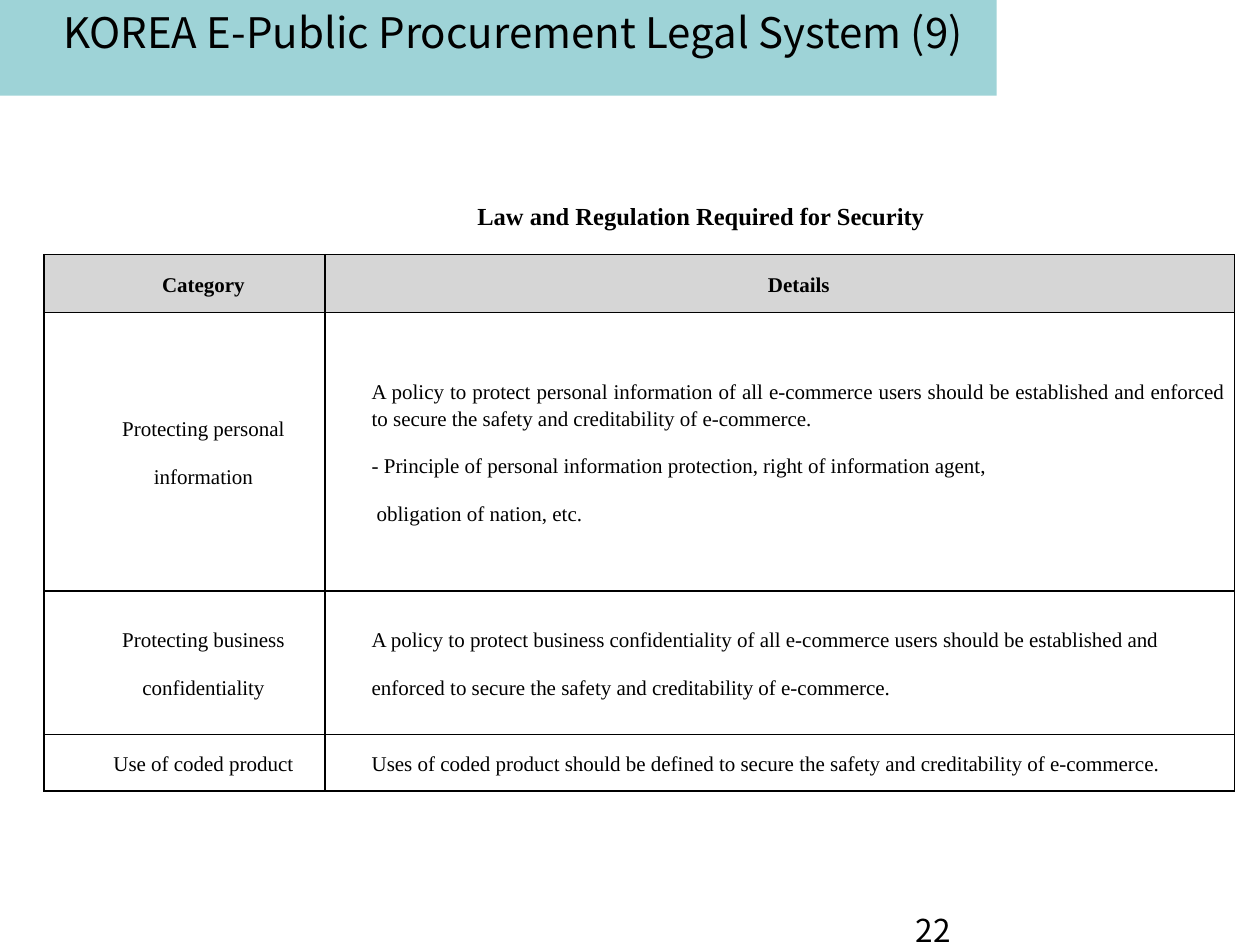
from lxml.etree import SubElement
from pptx import Presentation
from pptx.dml.color import RGBColor
from pptx.enum.shapes import MSO_SHAPE
from pptx.enum.text import MSO_ANCHOR, PP_ALIGN
from pptx.oxml.ns import qn
from pptx.util import Inches, Pt

TITLE = "KOREA E-Public Procurement Legal System (9)"
CAPTION = "Law and Regulation Required for Security"
PAGE = "22"
HEADER = ("Category", "Details")
BODY = [
    (["Protecting personal", "information"],
     ["A policy to protect personal information of all e-commerce users should be "
      "established and enforced to secure the safety and creditability of e-commerce.",
      "- Principle of personal information protection, right of information agent,",
      "obligation of nation, etc."]),
    (["Protecting business", "confidentiality"],
     ["A policy to protect business confidentiality of all e-commerce users should be "
      "established and",
      "enforced to secure the safety and creditability of e-commerce."]),
    (["Use of coded product"],
     ["Uses of coded product should be defined to secure the safety and creditability "
      "of e-commerce."]),
]
COLS = (2.23, 7.22)
ROWS = (0.46, 2.21, 1.14, 0.45)
SANS, SERIF = "Noto Sans CJK KR", "Times New Roman"
BLACK, TEAL, GREY = "000000", "9ED3D7", "D6D6D6"
INDENT, HANGING = 0.3, {"obligation of nation, etc.": 0.34}


def rgb(value):
    return RGBColor.from_string(value)


def inches(*values):
    return [Inches(v) for v in values]


def write(p, text, size, font, bold=False, align=PP_ALIGN.LEFT, indent=0):
    p.alignment = align
    pPr = p._p.get_or_add_pPr()
    pPr.set("marL", str(Inches(indent)))
    pPr.set("indent", "0")
    r = p.add_run()
    r.text = text
    r.font.size, r.font.name, r.font.bold = Pt(size), font, bold
    r.font.color.rgb = rgb(BLACK)


def add_text(slide, box, text, *style, **options):
    tf = slide.shapes.add_textbox(*inches(*box)).text_frame
    tf.word_wrap = True
    write(tf.paragraphs[0], text, *style, **options)


def add_borders(cell):
    tcPr = cell._tc.get_or_add_tcPr()
    for side in ("lnL", "lnR", "lnT", "lnB"):
        ln = SubElement(tcPr, qn(f"a:{side}"), w=str(Pt(1)))
        fill = SubElement(ln, qn("a:solidFill"))
        SubElement(fill, qn("a:srgbClr"), val=BLACK)


def fill_cell(cell, lines, header, align):
    add_borders(cell)
    if header:
        cell.fill.solid()
        cell.fill.fore_color.rgb = rgb(GREY)
    else:
        cell.fill.background()
    cell.vertical_anchor = MSO_ANCHOR.MIDDLE
    cell.margin_left = cell.margin_right = Inches(0.07)
    cell.margin_top = cell.margin_bottom = Inches(0.02)
    tf = cell.text_frame
    for i, line in enumerate(lines):
        p = tf.add_paragraph() if i else tf.paragraphs[0]
        write(p, line, 12, SERIF, header, align, HANGING.get(line, INDENT))
        p.line_spacing = 1.15
        p.space_before = Pt(12 if i else 0)


def add_band(slide):
    s = slide.shapes.add_shape(MSO_SHAPE.RECTANGLE, *inches(0, 0, 7.91, 0.76))
    s.shadow.inherit = False
    s.fill.solid()
    s.fill.fore_color.rgb = rgb(TEAL)
    s.line.fill.background()
    slide.shapes._spTree.insert(2, s._element)


def add_title(slide):
    s = slide.shapes.title
    s.left, s.top, s.width, s.height = inches(0, 0, 8.14, 0.6)
    s.text_frame.vertical_anchor = MSO_ANCHOR.TOP
    write(s.text_frame.paragraphs[0], TITLE, 24, SANS, align=PP_ALIGN.CENTER)


def add_law_table(slide):
    box = inches(0.35, 2.02, sum(COLS), sum(ROWS))
    table = slide.shapes.add_table(len(ROWS), len(COLS), *box).table
    table.first_row = table.horz_banding = False
    for column, width in zip(table.columns, COLS):
        column.width = Inches(width)
    for row, height in zip(table.rows, ROWS):
        row.height = Inches(height)
    for i, row in enumerate([[[h] for h in HEADER]] + BODY):
        for j, lines in enumerate(row):
            align = PP_ALIGN.JUSTIFY if i and j else PP_ALIGN.CENTER
            fill_cell(table.cell(i, j), lines, i == 0, align)


def main():
    prs = Presentation()
    prs.slide_width, prs.slide_height = inches(10, 7.5)
    slide = prs.slides.add_slide(prs.slide_layouts[5])
    add_band(slide)
    add_title(slide)
    add_law_table(slide)
    add_text(slide, (1.69, 1.55, 5.94, 0.4), CAPTION, 14, SERIF, bold=True, indent=2)
    add_text(slide, (7.17, 7.18, 2.33, 0.32), PAGE, 18, SANS)
    prs.save("out.pptx")


if __name__ == "__main__":
    main()
